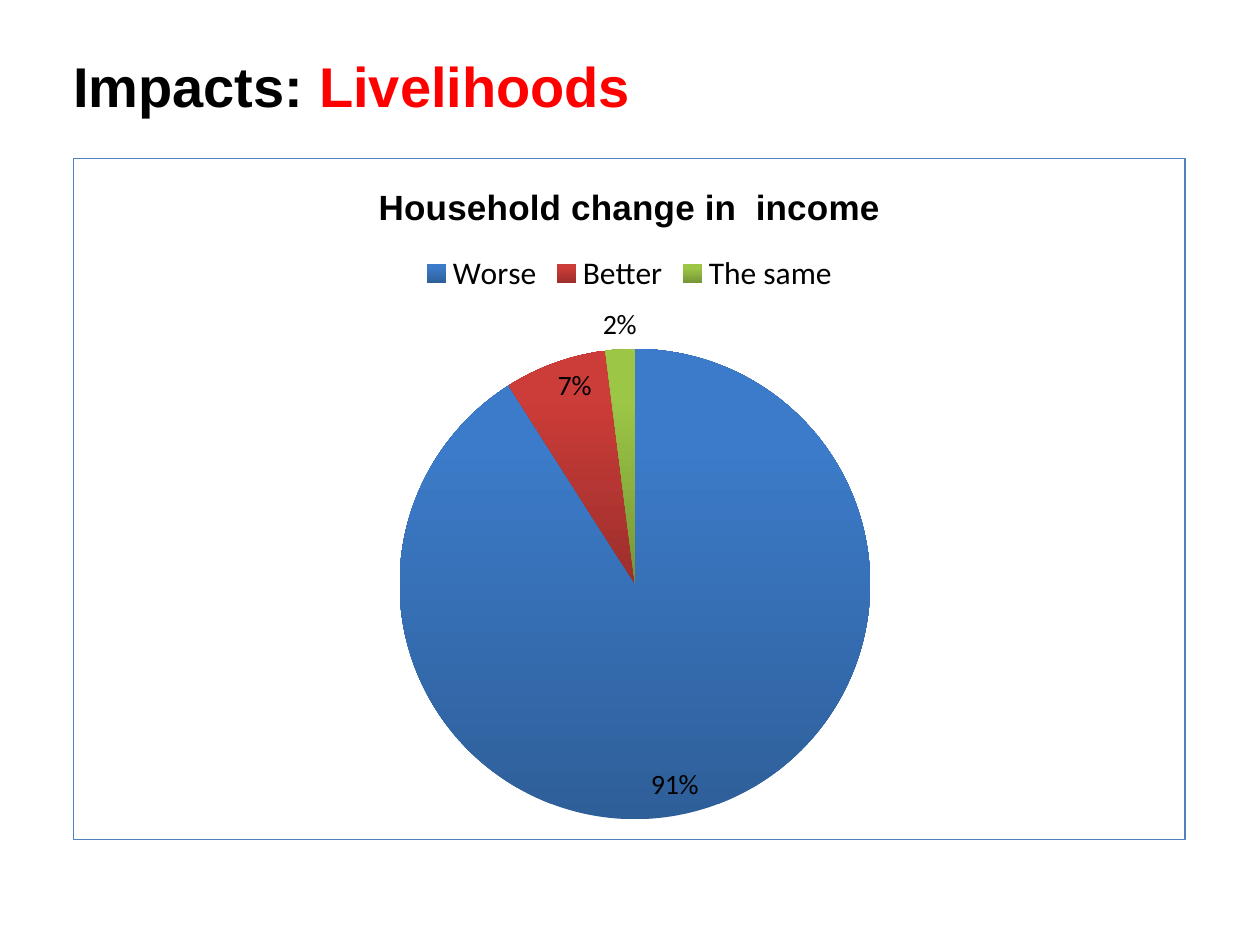
from lxml import etree
from pptx import Presentation
from pptx import util as u
from pptx.chart import data as chart_data
from pptx.dml import color
from pptx.enum import chart as charts, text
from pptx.oxml import ns

COLORS = {"black": "000000", "red": "FF0000", "border": "4F81BD"}
SLICES = [
    ("Worse", 91, "2E5F99", "3C7BC9"),
    ("Better", 7, "9C2F2C", "CC3C38"),
    ("The same", 2, "779636", "9CC746"),
]
NAMESPACES = ns.nsdecls("a", "c")


def rgb(value):
    """Turn a hex string into a colour."""
    return color.RGBColor.from_string(value)


def add_span(para, words, size, hue="black"):
    """Add a bold Arial run."""
    span = para.add_run()
    span.text = words
    span.font.name = "Arial"
    span.font.size = u.Pt(size)
    span.font.bold = True
    span.font.color.rgb = rgb(COLORS[hue])


def set_title(page):
    """Place and fill the slide title."""
    box = page.shapes.title
    box.left, box.top = u.Inches(0.48), u.Inches(0.14)
    box.width, box.height = u.Inches(9.07), u.Inches(1.07)
    box.text_frame.vertical_anchor = text.MSO_ANCHOR.MIDDLE
    para = box.text_frame.paragraphs[0]
    para.alignment = text.PP_ALIGN.LEFT
    add_span(para, "Impacts: ", 32)
    add_span(para, "Livelihoods", 32, hue="red")


def style_slice(point, dark, light):
    """Shade a slice from dark at the bottom to light at the top."""
    fill = point.format.fill
    fill.gradient()
    fill.gradient_angle = 90
    for stop, hue, position in zip(fill.gradient_stops, (dark, light), (0, 0.8)):
        stop.color.rgb = rgb(hue)
        stop.position = position
    point.format.line.fill.background()


def frame_chart(chart):
    """Draw the chart border and fix the pie area."""
    root = chart.element
    border = etree.fromstring(
        f'<c:spPr {NAMESPACES}><a:noFill/><a:ln w="{u.Pt(0.75)}"><a:solidFill>'
        f'<a:srgbClr val="{COLORS["border"]}"/></a:solidFill></a:ln></c:spPr>')
    root.find(ns.qn("c:chart")).addnext(border)
    area = root.find(".//" + ns.qn("c:plotArea"))
    for old in area.findall(ns.qn("c:layout")):
        area.remove(old)
    sizes = {"x": 0.29, "y": 0.28, "w": 0.43, "h": 0.69}
    modes = '<c:layoutTarget val="inner"/><c:xMode val="edge"/><c:yMode val="edge"/>'
    parts = "".join(f'<c:{key} val="{size}"/>' for key, size in sizes.items())
    area.insert(0, etree.fromstring(
        f"<c:layout {NAMESPACES}><c:manualLayout>{modes}{parts}"
        "</c:manualLayout></c:layout>"))


def label_slices(chart):
    """Show percentages inside the slices, and outside the smallest."""
    plot = chart.plots[0]
    plot.has_data_labels = True
    labels = plot.data_labels
    labels.show_percentage = True
    labels.show_value = False
    labels.number_format = "0%"
    labels.number_format_is_linked = False
    labels.font.size = u.Pt(16)
    places = charts.XL_LABEL_POSITION
    labels.position = places.INSIDE_END
    for index, point_place in enumerate(
            (places.INSIDE_END, places.INSIDE_END, places.OUTSIDE_END)):
        label = plot.series[0].points[index].data_label
        label.font.size = u.Pt(16)
        label.position = point_place
    for holder in chart.element.iter(ns.qn("c:dLbl"), ns.qn("c:dLbls")):
        for tag, shown in (("c:showVal", "0"), ("c:showPercent", "1")):
            holder.find(ns.qn(tag)).set("val", shown)


def add_pie(page):
    """Add the household income pie chart."""
    data = chart_data.CategoryChartData()
    data.categories = [name for name, *_ in SLICES]
    data.add_series("Series 1", [value for _, value, *_ in SLICES])
    chart = page.shapes.add_chart(
        charts.XL_CHART_TYPE.PIE, u.Inches(0.58), u.Inches(1.25),
        u.Inches(8.83), u.Inches(5.42), data).chart
    chart.font.name = "Calibri"
    chart.font.size = u.Pt(10)
    chart.font.color.rgb = rgb(COLORS["black"])
    chart.has_title = True
    add_span(chart.chart_title.text_frame.paragraphs[0],
             "Household change in  income", 20)
    chart.has_legend = True
    chart.legend.position = charts.XL_LEGEND_POSITION.TOP
    chart.legend.include_in_layout = False
    chart.legend.font.size = u.Pt(18)
    chart.plots[0].vary_by_categories = True
    for index, (_, _, dark, light) in enumerate(SLICES):
        style_slice(chart.plots[0].series[0].points[index], dark, light)
    label_slices(chart)
    frame_chart(chart)


def main():
    """Build the slide and save it."""
    deck = Presentation()
    deck.slide_width, deck.slide_height = u.Inches(10), u.Inches(7.5)
    page = deck.slides.add_slide(deck.slide_layouts[5])
    set_title(page)
    add_pie(page)
    deck.save("out.pptx")


if __name__ == "__main__":
    main()
